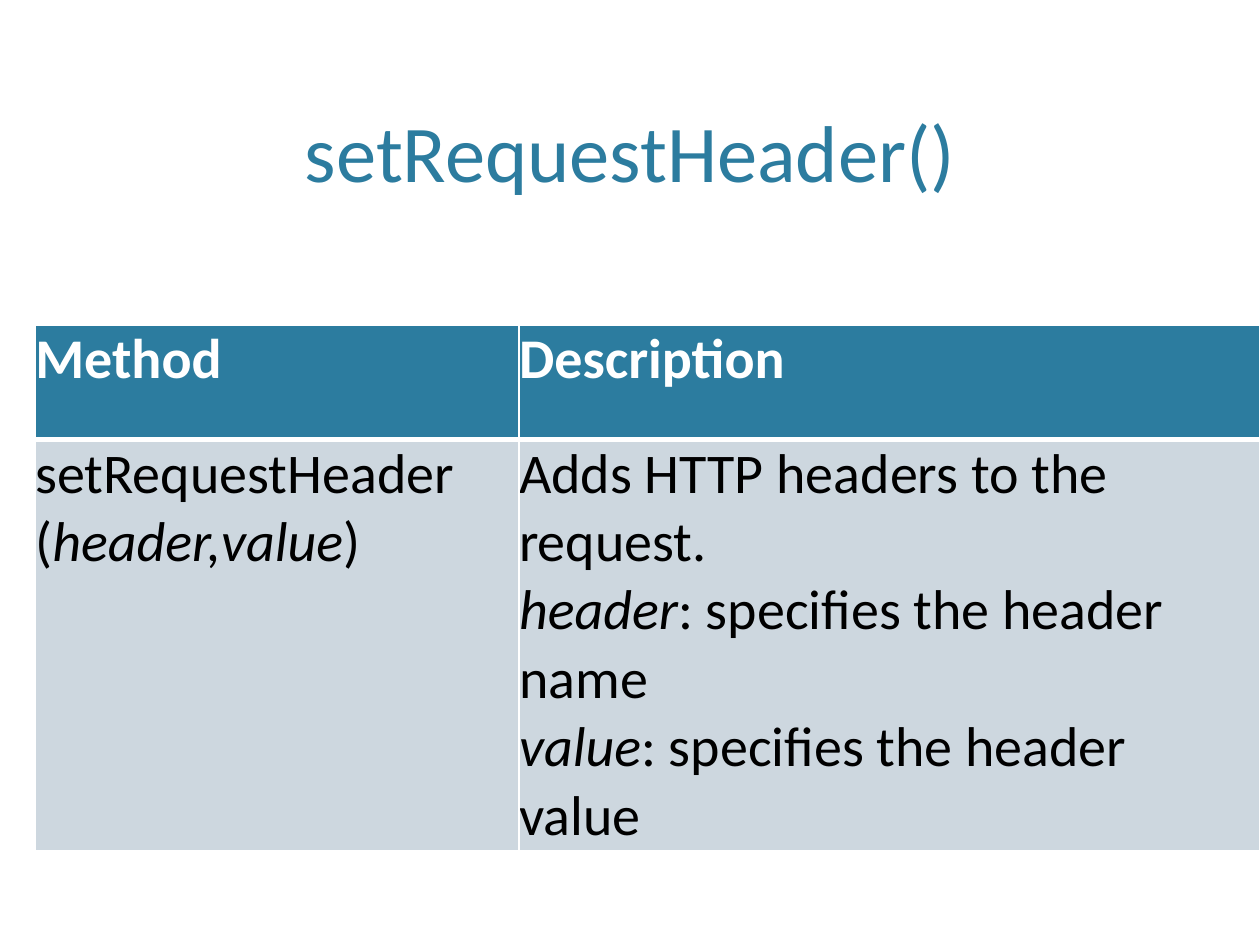
import pptx
import pptx.util
import pptx.dml.color
import pptx.enum.text
import pptx.oxml.ns
from lxml import etree

TITLE = "setRequestHeader()"
# Each cell is a list of lines, each line a list of (text, italic) runs.
ROWS = [
    [
        [[("Method", False)]],
        [[("Description", False)]],
    ],
    [
        [[("setRequestHeader (", False), ("header,value", True), (")", False)]],
        [
            [("Adds HTTP headers to the request.", False)],
            [("header", True), (": specifies the header name", False)],
            [("value", True), (": specifies the header value", False)],
        ],
    ],
]
COLORS = {"teal": "2C7C9F", "pale": "CDD7DF", "white": "FFFFFF", "black": "000000"}
FONT = "Calibri"
WIDTHS = [3.84, 5.88]
HEIGHTS = [0.91, 3.24]
THIN, THICK = 1, 3

Inches, Pt = pptx.util.Inches, pptx.util.Pt


def color(name):
    return pptx.dml.color.RGBColor.from_string(COLORS[name])


def add_run(para, text, size, tint, bold=False, italic=False):
    run = para.add_run()
    run.text = text
    font = run.font
    font.name, font.size = FONT, Pt(size)
    font.bold, font.italic = bold, italic
    font.color.rgb = color(tint)


def add_edge(cell, side, width):
    """Draw a white border on one side: L, R, T or B."""
    qn = pptx.oxml.ns.qn
    props = cell._tc.get_or_add_tcPr()
    line = etree.SubElement(props, qn("a:ln" + side), w=str(Pt(width)))
    fill = etree.SubElement(line, qn("a:solidFill"))
    etree.SubElement(fill, qn("a:srgbClr"), val=COLORS["white"])


def fill_cell(cell, lines, head):
    rule = {"T": THIN if head else THICK, "B": THICK if head else THIN}
    for side in "LRTB":
        add_edge(cell, side, rule.get(side, THIN))
    cell.fill.solid()
    cell.fill.fore_color.rgb = color("teal" if head else "pale")
    cell.margin_left = cell.margin_right = 0
    cell.margin_top = cell.margin_bottom = 0
    para = cell.text_frame.paragraphs[0]
    for index, line in enumerate(lines):
        if index:
            para.add_line_break()
        for text, italic in line:
            add_run(para, text, 32, "white" if head else "black", head, italic)


def add_title(slide):
    title = slide.shapes.title
    title.left, title.top = Inches(0.6), Inches(0.12)
    title.width, title.height = Inches(8.8), Inches(1.46)
    frame = title.text_frame
    frame.auto_size = pptx.enum.text.MSO_AUTO_SIZE.NONE
    frame.vertical_anchor = pptx.enum.text.MSO_ANCHOR.BOTTOM
    frame.margin_bottom = 0
    para = frame.paragraphs[0]
    para.alignment = pptx.enum.text.PP_ALIGN.CENTER
    add_run(para, TITLE, 46, "teal")


def add_grid(slide):
    table = slide.shapes.add_table(
        len(HEIGHTS), len(WIDTHS), Inches(0.28), Inches(2.58),
        Inches(sum(WIDTHS)), Inches(sum(HEIGHTS)),
    ).table
    for column, width in zip(table.columns, WIDTHS):
        column.width = Inches(width)
    for row, height, cells in zip(table.rows, HEIGHTS, ROWS):
        row.height = Inches(height)
        for cell, lines in zip(row.cells, cells):
            fill_cell(cell, lines, cells is ROWS[0])


def main():
    deck = pptx.Presentation()
    deck.slide_width, deck.slide_height = Inches(10), Inches(7.5)
    slide = deck.slides.add_slide(deck.slide_layouts[5])
    add_title(slide)
    add_grid(slide)
    deck.save("out.pptx")


if __name__ == "__main__":
    main()
